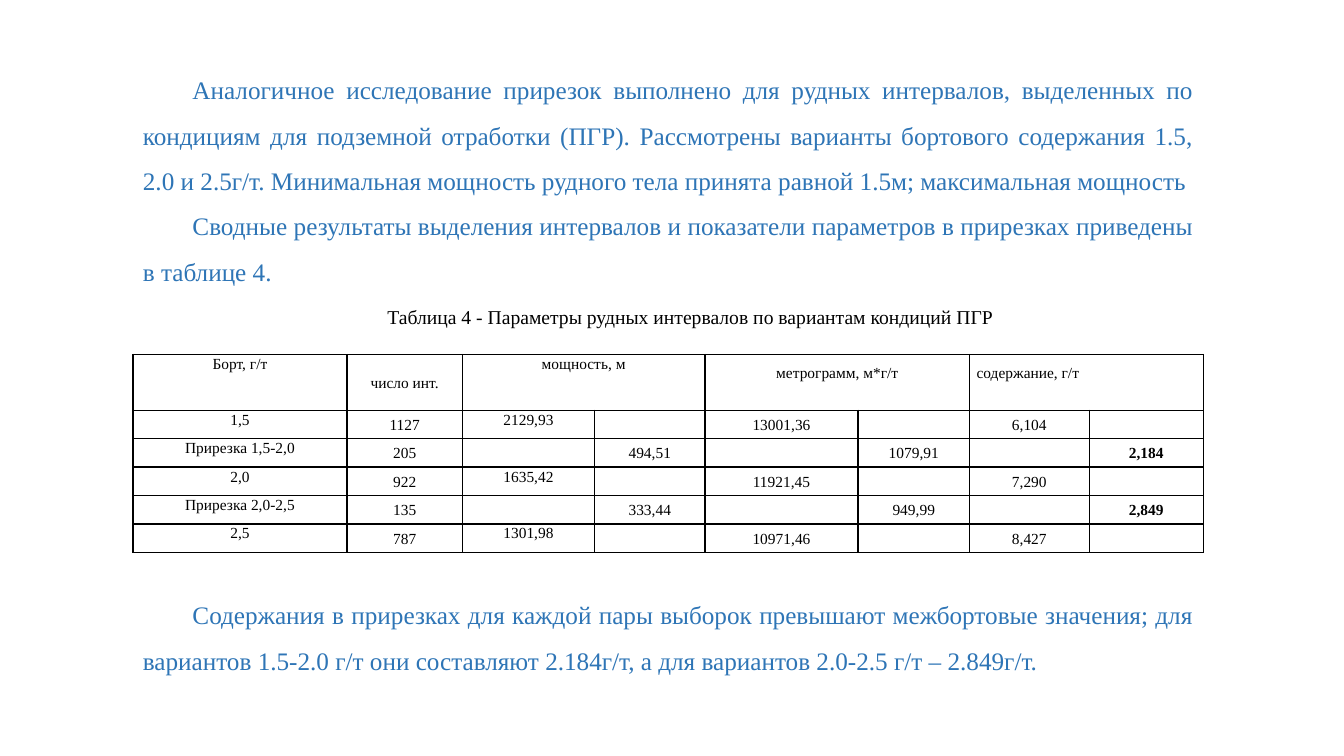
from lxml.etree import SubElement
from pptx import Presentation
from pptx.dml.color import RGBColor
from pptx.enum.text import MSO_ANCHOR, MSO_AUTO_SIZE, PP_ALIGN
from pptx.oxml.ns import qn
from pptx.util import Pt

BLUE = RGBColor(0x2E, 0x75, 0xB6)
BLACK = RGBColor(0, 0, 0)
FONT = "Times New Roman"


def style(par, size, color, align, gap):
    par.alignment = align
    par.line_spacing = gap
    for run in par.runs:
        look = {"name": FONT, "size": Pt(size)}
        for key, val in look.items():
            setattr(run.font, key, val)
        run.font.color.rgb = color


def add_text(left, top, width, height, lines, size, color, align):
    box = slide.shapes.add_textbox(Pt(left), Pt(top), Pt(width), Pt(height))
    frame = box.text_frame
    frame.word_wrap = True
    frame.auto_size = MSO_AUTO_SIZE.SHAPE_TO_FIT_TEXT
    frame.text = "\n".join(lines)
    for par in frame.paragraphs:
        style(par, size, color, align, 1.5)
        par._p.get_or_add_pPr().set("indent", str(Pt(35.4)))
        par._p.get_or_add_pPr().set("marL", "0")


prs = Presentation()
prs.slide_width, prs.slide_height = Pt(960), Pt(540)
slide = prs.slides.add_slide(prs.slide_layouts[6])

add_text(95, 39, 764.6, 167, [
    "Аналогичное исследование прирезок выполнено для рудных интервалов, "
    "выделенных по кондициям для подземной отработки (ПГР). Рассмотрены "
    "варианты бортового содержания 1.5, 2.0 и 2.5г/т. Минимальная мощность "
    "рудного тела принята равной 1.5м; максимальная мощность ",
    "Сводные результаты выделения интервалов и показатели параметров "
    "в прирезках приведены в таблице 4.",
], 18, BLUE, PP_ALIGN.JUSTIFY)
add_text(150, 206, 654.5, 30, [
    "Таблица 4 - Параметры рудных интервалов по вариантам кондиций ПГР ",
], 14, BLACK, PP_ALIGN.CENTER)

rows = [
    ["Борт, г/т", "число инт.", "мощность, м", "", "метрограмм, м*г/т", "",
     "содержание, г/т", ""],
    ["1,5", "1127", "2129,93", "", "13001,36", "", "6,104", ""],
    ["Прирезка 1,5-2,0", "205", "", "494,51", "", "1079,91", "", "2,184"],
    ["2,0", "922", "1635,42", "", "11921,45", "", "7,290", ""],
    ["Прирезка 2,0-2,5", "135", "", "333,44", "", "949,99", "", "2,849"],
    ["2,5", "787", "1301,98", "", "10971,46", "", "8,427", ""],
]
wide = [152.9, 82.4, 94.5, 78.9, 109.3, 79.7, 85.4, 81.7]
high = [39.8] + [20.35] * 5
grid = slide.shapes.add_table(
    len(rows), len(wide), Pt(95), Pt(253.2), Pt(sum(wide)), Pt(sum(high))).table
grid.first_row = grid.horz_banding = False
for col, width in zip(grid.columns, wide):
    col.width = Pt(width)
for row, height in zip(grid.rows, high):
    row.height = Pt(height)

for r, row in enumerate(rows):
    for c, word in enumerate(row):
        cell = grid.cell(r, c)
        form = {
            "text": word,
            "margin_left": Pt(5), "margin_right": Pt(5), "margin_top": 0,
            "margin_bottom": Pt(13.5) if r == 0 and c > 2 else 0,
            "vertical_anchor": MSO_ANCHOR.TOP if c in (0, 2) else MSO_ANCHOR.MIDDLE,
        }
        for key, val in form.items():
            setattr(cell, key, val)
        par = cell.text_frame.paragraphs[0]
        align = PP_ALIGN.LEFT if r == 0 and c == 6 else PP_ALIGN.CENTER
        style(par, 11, BLACK, align, 1.07)
        for run in par.runs:
            run.font.bold = r > 0 and c == 7
        if not word:
            SubElement(par._p, qn("a:endParaRPr"), sz="1100")
        prop = cell._tc.get_or_add_tcPr()
        for side in ("lnL", "lnR", "lnT", "lnB"):
            line = SubElement(prop, qn("a:" + side), w=str(Pt(1)))
            fill = SubElement(line, qn("a:solidFill"))
            SubElement(fill, qn("a:srgbClr"), val=str(BLACK))
        cell.fill.background()

for c in (2, 4, 6):
    grid.cell(0, c).merge(grid.cell(0, c + 1))

add_text(95, 414, 764.6, 69, [
    "Содержания в прирезках для каждой пары выборок превышают межбортовые "
    "значения; для вариантов 1.5-2.0 г/т они составляют 2.184г/т, а для "
    "вариантов 2.0-2.5 г/т – 2.849г/т.",
], 18, BLUE, PP_ALIGN.JUSTIFY)

prs.save("out.pptx")
